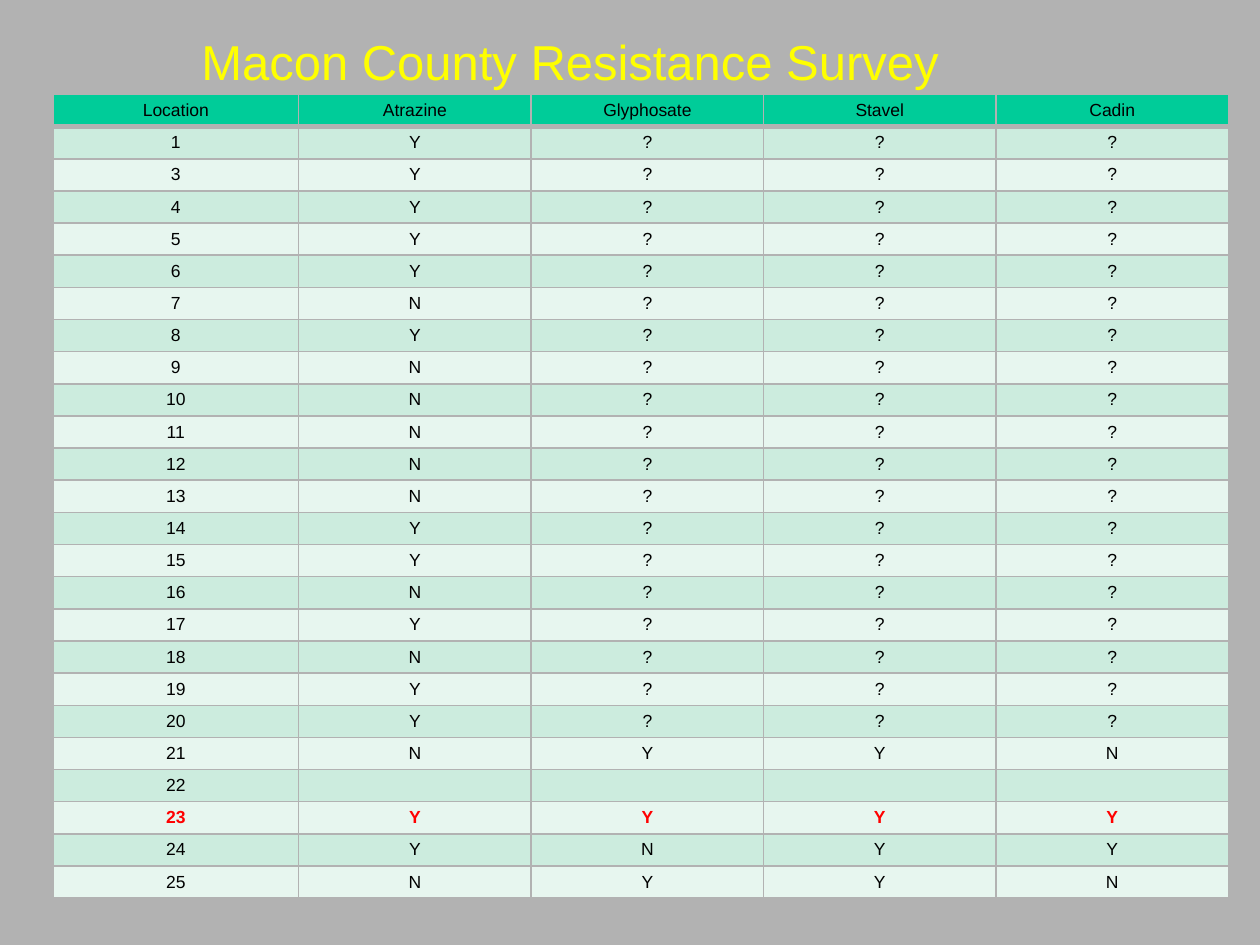
from lxml import etree
from pptx import Presentation
from pptx.dml.color import RGBColor
from pptx.enum.text import MSO_ANCHOR, PP_ALIGN
from pptx.oxml.ns import qn
from pptx.util import Inches, Pt

MIDDLE, CENTER = MSO_ANCHOR.MIDDLE, PP_ALIGN.CENTER
THEME = {
    "font": "Arial", "title_size": 28, "cell_size": 10,
    "background": "B2B2B2", "title": "FFFF00", "header": "00CC99",
    "bands": ("E7F6EF", "CCECDE"), "text": "000000", "highlight": "FF0000",
}

# Survey answers: atrazine by location, then the locations tested for more
HEADERS = ["Location", "Atrazine", "Glyphosate", "Stavel", "Cadin"]
LOCATIONS = [1, *range(3, 26)]
ATRAZINE = dict(zip(LOCATIONS, "YYYYYNYNNNNNYYNYNYY"))
TESTED = {21: "NYYN", 22: [""] * 4, 23: "YYYY", 24: "YNYY", 25: "NYYN"}
RESISTANT_TO_ALL = 23


def add_run(paragraph, text, size, color, bold=False):
    run = paragraph.add_run()
    run.text = text
    run.font.name = THEME["font"]
    run.font.size = Pt(size)
    run.font.bold = bold
    run.font.color.rgb = RGBColor.from_string(color)


def add_borders(cell, widths):
    properties = cell._tc.get_or_add_tcPr()
    for side, width in widths.items():
        line = etree.SubElement(properties, qn(f"a:ln{side}"), w=str(Pt(width)))
        fill = etree.SubElement(line, qn("a:solidFill"))
        etree.SubElement(fill, qn("a:srgbClr"), val=THEME["background"])


prs = Presentation()
prs.slide_width, prs.slide_height = Inches(10), Inches(7.5)
slide = prs.slides.add_slide(prs.slide_layouts[6])
slide.background.fill.solid()
slide.background.fill.fore_color.rgb = RGBColor.from_string(THEME["background"])

# Title
title = slide.shapes.add_textbox(Inches(1.5), Inches(0.03), Inches(8.35), Inches(0.9))
title.text_frame.word_wrap = True
title.text_frame.vertical_anchor = MIDDLE
add_run(title.text_frame.paragraphs[0], "Macon County Resistance Survey",
        THEME["title_size"], THEME["title"])

# Survey grid: one wider location column, equal herbicide columns
survey_rows = [HEADERS]
for location in LOCATIONS:
    answers = TESTED.get(location) or [ATRAZINE[location], "?", "?", "?"]
    survey_rows.append([str(location), *answers])

survey_width, survey_height, location_width = 9.33, 6.38, 1.95
herbicide_width = (survey_width - location_width) / (len(HEADERS) - 1)
row_height = survey_height / len(survey_rows)
survey = slide.shapes.add_table(
    len(survey_rows), len(HEADERS), Inches(0.42), Inches(0.75),
    Inches(survey_width), Inches(survey_height)).table
survey.first_row = survey.horz_banding = False
for column_index, column in enumerate(survey.columns):
    column.width = Inches(herbicide_width if column_index else location_width)

# Survey cells
for row_index, answers in enumerate(survey_rows):
    survey.rows[row_index].height = Inches(row_height)
    fill_color = THEME["bands"][row_index % 2] if row_index else THEME["header"]
    highlighted = answers[0] == str(RESISTANT_TO_ALL)
    text_color = THEME["highlight"] if highlighted else THEME["text"]
    borders = {"L": 1, "R": 1, "T": 3 if row_index == 1 else 1,
               "B": 3 if row_index == 0 else 1}
    for column_index, answer in enumerate(answers):
        cell = survey.cell(row_index, column_index)
        cell.margin_top, cell.margin_bottom = Inches(0.05), Inches(0.03)
        add_borders(cell, borders)
        cell.fill.solid()
        cell.fill.fore_color.rgb = RGBColor.from_string(fill_color)
        paragraph = cell.text_frame.paragraphs[0]
        paragraph.alignment = CENTER
        if answer:
            add_run(paragraph, answer, THEME["cell_size"], text_color, highlighted)
        else:  # keeps an empty cell as low as its row
            etree.SubElement(paragraph._p, qn("a:endParaRPr"),
                             sz=str(THEME["cell_size"] * 100))

prs.save("out.pptx")
